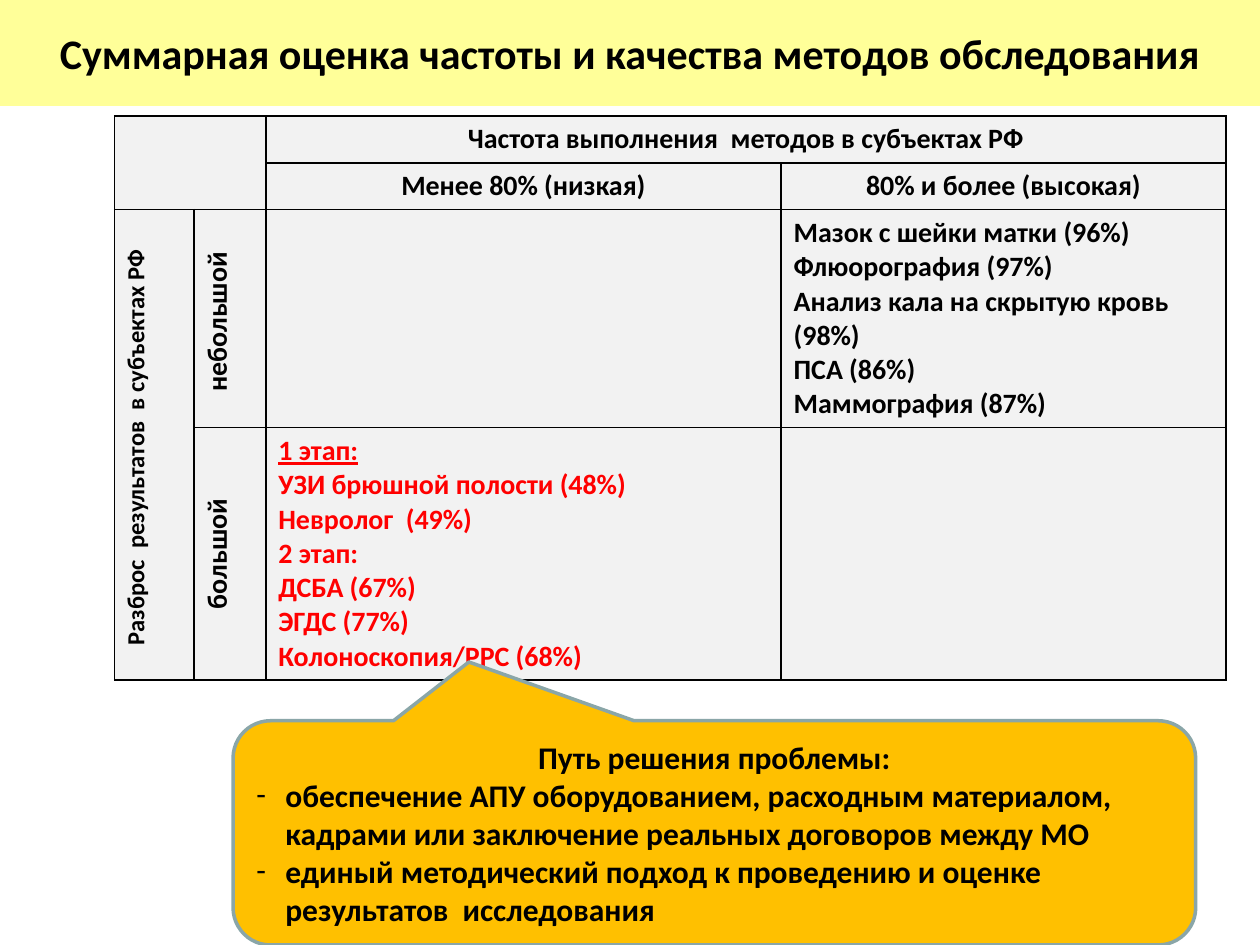
from dataclasses import dataclass

from lxml.etree import SubElement
from pptx import Presentation
from pptx.dml.color import RGBColor
from pptx.enum.shapes import MSO_SHAPE
from pptx.enum.text import MSO_ANCHOR, PP_ALIGN
from pptx.oxml.ns import qn
from pptx.util import Inches, Pt


@dataclass(frozen=True)
class Theme:
    font: str = "Calibri"
    ink: str = "000000"
    alert: str = "FF0000"
    banner: str = "FFFF99"
    cell: str = "F2F2F2"
    callout: str = "FFC000"
    callout_line: str = "8AA6A8"
    title_size: int = 24
    callout_size: int = 18
    table_size: int = 16
    small_size: int = 14


def write_text(frame, text, *, theme, size, color=None, align=PP_ALIGN.LEFT, underlined=(), bulleted=()):
    """Write one paragraph per line of text; underlined and bulleted hold line numbers."""
    for index, line in enumerate(text.split("\n")):
        paragraph = frame.paragraphs[0] if index == 0 else frame.add_paragraph()
        paragraph.alignment = PP_ALIGN.LEFT if index in bulleted else align
        if index in bulleted:
            properties = paragraph._p.get_or_add_pPr()
            indent = Inches(0.23)
            properties.set("marL", str(indent))
            properties.set("indent", str(-indent))
            SubElement(properties, qn("a:buFont"), typeface=theme.font)
            SubElement(properties, qn("a:buChar"), char="-")
        if not line:
            SubElement(paragraph._p, qn("a:endParaRPr"), sz=str(size * 100))
            continue
        run = paragraph.add_run()
        run.text = line
        run.font.name = theme.font
        run.font.size = Pt(size)
        run.font.bold = True
        run.font.underline = True if index in underlined else None
        run.font.color.rgb = RGBColor.from_string(color or theme.ink)


class SlideBuilder:
    """Places elements on a grid of 100 columns by 75 rows."""

    columns, rows = 100, 75

    def __init__(self, presentation, theme):
        self.theme = theme
        self.column = presentation.slide_width / self.columns
        self.row = presentation.slide_height / self.rows
        self.slide = presentation.slides.add_slide(presentation.slide_layouts[6])

    def area(self, left, top, width, height):
        return (round(left * self.column), round(top * self.row),
                round(width * self.column), round(height * self.row))

    def block(self, kind, area, text, *, fill, line=None, adjustments=(), **text_format):
        shape = self.slide.shapes.add_shape(kind, *self.area(*area))
        shape.shadow.inherit = False
        for index, value in enumerate(adjustments):
            shape.adjustments[index] = value
        shape.fill.solid()
        shape.fill.fore_color.rgb = RGBColor.from_string(fill)
        if line:
            shape.line.color.rgb = RGBColor.from_string(line)
            shape.line.width = Pt(2)
        else:
            shape.line.fill.background()
        shape.text_frame.word_wrap = True
        shape.text_frame.vertical_anchor = MSO_ANCHOR.MIDDLE
        write_text(shape.text_frame, text, theme=self.theme, **text_format)

    def table(self, left, top, widths, heights, merges):
        area = self.area(left, top, sum(widths), sum(heights))
        table = self.slide.shapes.add_table(len(heights), len(widths), *area).table
        table.first_row = table.horz_banding = False
        for column, width in zip(table.columns, widths):
            column.width = round(width * self.column)
        for row, height in zip(table.rows, heights):
            row.height = round(height * self.row)
        for first, last in merges:
            table.cell(*first).merge(table.cell(*last))
        for cell in table.iter_cells():
            self.style_cell(cell)
        return table

    def style_cell(self, cell):
        properties = cell._tc.get_or_add_tcPr()
        for side in ("lnL", "lnR", "lnT", "lnB"):
            border = SubElement(properties, qn(f"a:{side}"), w=str(Pt(1)))
            fill = SubElement(border, qn("a:solidFill"))
            SubElement(fill, qn("a:srgbClr"), val=self.theme.ink)
        cell.fill.solid()
        cell.fill.fore_color.rgb = RGBColor.from_string(self.theme.cell)

    def cell_text(self, cell, text, *, vertical=False, size=None, **text_format):
        if vertical:
            cell._tc.get_or_add_tcPr().set("vert", "vert270")
        write_text(cell.text_frame, text, theme=self.theme,
                   size=size or self.theme.table_size, **text_format)


def main():
    presentation = Presentation()
    presentation.slide_width, presentation.slide_height = Inches(10), Inches(7.5)
    theme = Theme()
    builder = SlideBuilder(presentation, theme)

    # Title banner
    builder.block(MSO_SHAPE.RECTANGLE, (0, 0, 100, 8.4),
                  "Суммарная оценка частоты и качества методов обследования",
                  fill=theme.banner, size=theme.title_size, align=PP_ALIGN.CENTER)

    # Frequency and spread matrix
    table = builder.table(9.1, 9.2, (6.3, 5.7, 40.9, 35.3), (3.2, 3.4, 14.8, 18.2),
                          merges=(((0, 0), (1, 1)), ((0, 2), (0, 3)), ((2, 0), (3, 0))))
    centered = {"align": PP_ALIGN.CENTER}
    upright = {"align": PP_ALIGN.CENTER, "vertical": True}
    cells = {
        (0, 2): ("Частота выполнения  методов в субъектах РФ", centered),
        (1, 2): ("Менее 80% (низкая)", centered),
        (1, 3): ("80% и более (высокая)", centered),
        (2, 0): ("Разброс  результатов  в субъектах РФ ", {**upright, "size": theme.small_size}),
        (2, 1): ("небольшой ", upright),
        (2, 3): ("Мазок с шейки матки (96%)\nФлюорография (97%)\n"
                 "Анализ кала на скрытую кровь (98%)\nПСА (86%)\nМаммография (87%)", {}),
        (3, 1): ("большой", upright),
        (3, 2): ("1 этап:\nУЗИ брюшной полости (48%)\nНевролог  (49%)\n2 этап:\n"
                 "ДСБА (67%)\nЭГДС (77%)\nКолоноскопия/РРС (68%)",
                 {"color": theme.alert, "underlined": (0,)}),
    }
    for row in range(4):
        for column in range(4):
            text, text_format = cells.get((row, column), ("", {}))
            builder.cell_text(table.cell(row, column), text, **text_format)

    # Callout with the solution
    builder.block(MSO_SHAPE.ROUNDED_RECTANGULAR_CALLOUT, (18.5, 57.2, 76.4, 17.8),
                  "Путь решения проблемы:\n"
                  "обеспечение АПУ оборудованием, расходным материалом, "
                  "кадрами или заключение реальных договоров между МО\n"
                  "единый методический подход к проведению и оценке результатов  исследования",
                  fill=theme.callout, line=theme.callout_line, adjustments=(-0.255, -0.762, 0.167),
                  size=theme.callout_size, align=PP_ALIGN.CENTER, bulleted=(1, 2))

    presentation.save("out.pptx")


if __name__ == "__main__":
    main()
